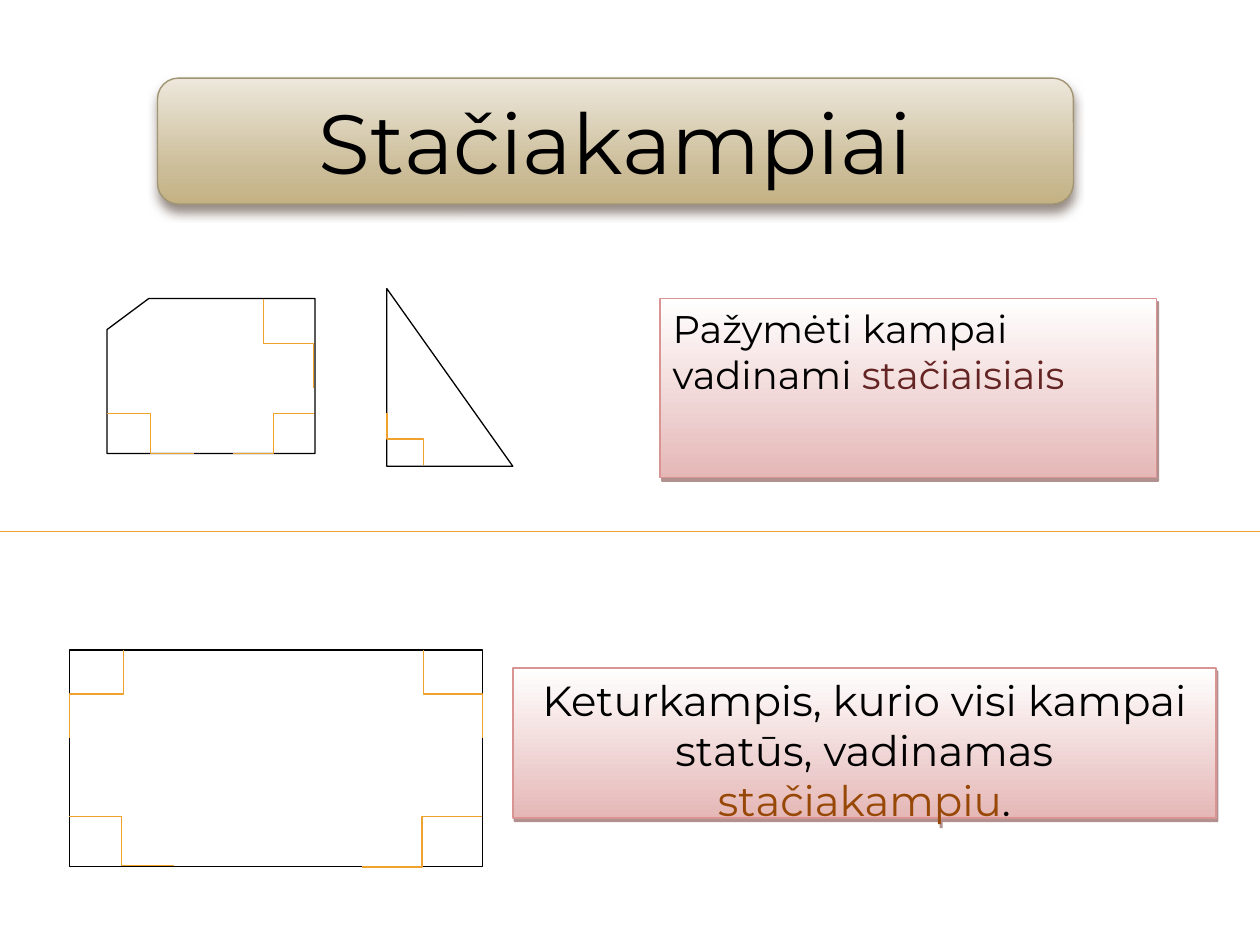
from dataclasses import dataclass

from lxml.etree import SubElement
from pptx import Presentation
from pptx.dml.color import RGBColor
from pptx.enum.shapes import MSO_CONNECTOR, MSO_SHAPE
from pptx.enum.text import MSO_ANCHOR, PP_ALIGN
from pptx.oxml.ns import qn
from pptx.util import Inches, Pt


@dataclass(frozen=True)
class Theme:
    font: str = "Montserrat"
    ink: str = "000000"
    paper: str = "FFFFFF"
    mark: str = "F0A22E"
    rose: str = "D99594"
    wine: str = "632423"
    rust: str = "984806"
    sand: str = "A19574"
    pink_fade: tuple = ((0, "FFFFFF"), (100, "E5B8B7"))
    sand_fade: tuple = ((0, "EDE8DC"), (72, "CCBD99"), (100, "C4B284"))
    # colour, opacity %, blur pt, distance pt, angle
    pink_shade: tuple = ("622423", 50, 0, 2.2, 63)
    sand_shade: tuple = ("4E3B30", 60, 6, 4, 90)
    title: int = 48
    note: int = 22
    rule: int = 24
    thin: float = 0.75
    mid: float = 0.79
    edge: float = 1


THEME = Theme()


def rgb(code):
    return RGBColor.from_string(code)


def add_shape(slide, kind, box, line, width):
    shape = slide.shapes.add_shape(kind, *map(Inches, box))
    shape.line.color.rgb = rgb(line)
    shape.line.width = Pt(width)
    shape.shadow.inherit = False
    return shape


def add_figure(slide, kind, box):
    """Add a plain outlined geometric figure."""
    shape = add_shape(slide, kind, box, THEME.ink, THEME.thin)
    shape.fill.solid()
    shape.fill.fore_color.rgb = rgb(THEME.paper)


def set_fade(shape, stops):
    """Fill with a gradient running from top to bottom."""
    shape.fill.gradient()
    shape.fill.gradient_angle = 270
    group = shape._element.spPr.find(".//" + qn("a:gsLst"))
    group.clear()
    for place, code in stops:
        stop = SubElement(group, qn("a:gs"), pos=str(place * 1000))
        SubElement(stop, qn("a:srgbClr"), val=code)


def set_shade(shape, shade):
    code, alpha, blur, dist, angle = shade
    effects = shape._element.spPr.find(qn("a:effectLst"))
    outer = SubElement(effects, qn("a:outerShdw"), blurRad=str(Pt(blur)),
                       dist=str(Pt(dist)), dir=str(angle * 60000),
                       algn="ctr", rotWithShape="0")
    color = SubElement(outer, qn("a:srgbClr"), val=code)
    SubElement(color, qn("a:alpha"), val=str(alpha * 1000))


def add_panel(slide, kind, box, line, width, fade, shade):
    shape = add_shape(slide, kind, box, line, width)
    set_fade(shape, fade)
    set_shade(shape, shade)
    return shape


def add_pink(slide, box):
    return add_panel(slide, MSO_SHAPE.RECTANGLE, box, THEME.rose, THEME.edge,
                     THEME.pink_fade, THEME.pink_shade)


def set_text(shape, runs, size, align, anchor=MSO_ANCHOR.TOP):
    """Write one paragraph from (text, colour) runs."""
    frame = shape.text_frame
    frame.word_wrap = True
    frame.vertical_anchor = anchor
    para = frame.paragraphs[0]
    para.alignment = align
    para.font.name = THEME.font
    para.font.size = Pt(size)
    for text, code in runs:
        run = para.add_run()
        run.text = text
        run.font.color.rgb = rgb(code)


def add_line(slide, kind, start, end):
    line = slide.shapes.add_connector(kind, *map(Inches, (*start, *end)))
    line.line.color.rgb = rgb(THEME.mark)
    line.line.width = Pt(THEME.mid)
    SubElement(line._element.spPr, qn("a:effectLst"))
    return line


def add_flat(slide, start, end):
    """Add an elbow that leaves its start sideways."""
    add_line(slide, MSO_CONNECTOR.ELBOW, start, end)


def add_drop(slide, start, end):
    """Add an elbow that leaves its start downwards, by a quarter turn."""
    (x1, y1), (x2, y2) = start, end
    mid_x, mid_y = (x1 + x2) / 2, (y1 + y2) / 2
    side = 1 if x2 < x1 else -1
    dx, dy = side * (x2 - x1) / 2, side * (y2 - y1) / 2
    line = add_line(slide, MSO_CONNECTOR.ELBOW,
                    (mid_x - dy, mid_y + dx), (mid_x + dy, mid_y - dx))
    turn = 90 if side == 1 else 270
    line._element.spPr.find(qn("a:xfrm")).set("rot", str(turn * 60000))


def main():
    deck = Presentation()
    deck.slide_width, deck.slide_height = Inches(10), Inches(7.5)
    slide = deck.slides.add_slide(deck.slide_layouts[6])

    add_figure(slide, MSO_SHAPE.FLOWCHART_CARD, (0.85, 2.37, 1.65, 1.23))
    add_figure(slide, MSO_SHAPE.RIGHT_TRIANGLE, (3.07, 2.29, 1, 1.41))
    note = add_pink(slide, (5.24, 2.37, 3.94, 1.42))
    set_text(note, [("Pažymėti kampai vadinami ", THEME.ink),
                    ("stačiaisiais", THEME.wine)], THEME.note, PP_ALIGN.LEFT)

    add_figure(slide, MSO_SHAPE.RECTANGLE, (0.55, 5.16, 3.28, 1.72))
    rule = add_pink(slide, (4.07, 5.3, 5.58, 1.19))
    set_text(rule, [("Keturkampis, kurio visi kampai statūs, vadinamas ", THEME.ink),
                    ("stačiakampiu", THEME.rust), (".", THEME.ink)],
             THEME.rule, PP_ALIGN.CENTER)

    title = add_panel(slide, MSO_SHAPE.ROUNDED_RECTANGLE, (1.25, 0.62, 7.27, 1),
                      THEME.sand, THEME.mid, THEME.sand_fade, THEME.sand_shade)
    set_text(title, [("Stačiakampiai", THEME.ink)], THEME.title,
             PP_ALIGN.CENTER, MSO_ANCHOR.MIDDLE)

    add_line(slide, MSO_CONNECTOR.STRAIGHT, (0, 4.22), (10, 4.22))
    for start, end in (((2.09, 2.37), (2.49, 3.08)),
                       ((3.07, 3.28), (3.36, 3.69)),
                       ((0.98, 5.16), (0.55, 5.86)),
                       ((3.36, 5.16), (3.83, 5.86))):
        add_drop(slide, start, end)
    for start, end in (((0.85, 3.28), (1.54, 3.6)),
                       ((2.49, 3.28), (1.85, 3.6)),
                       ((0.55, 6.48), (1.38, 6.87)),
                       ((3.83, 6.48), (2.87, 6.88))):
        add_flat(slide, start, end)

    deck.save("out.pptx")


if __name__ == "__main__":
    main()
